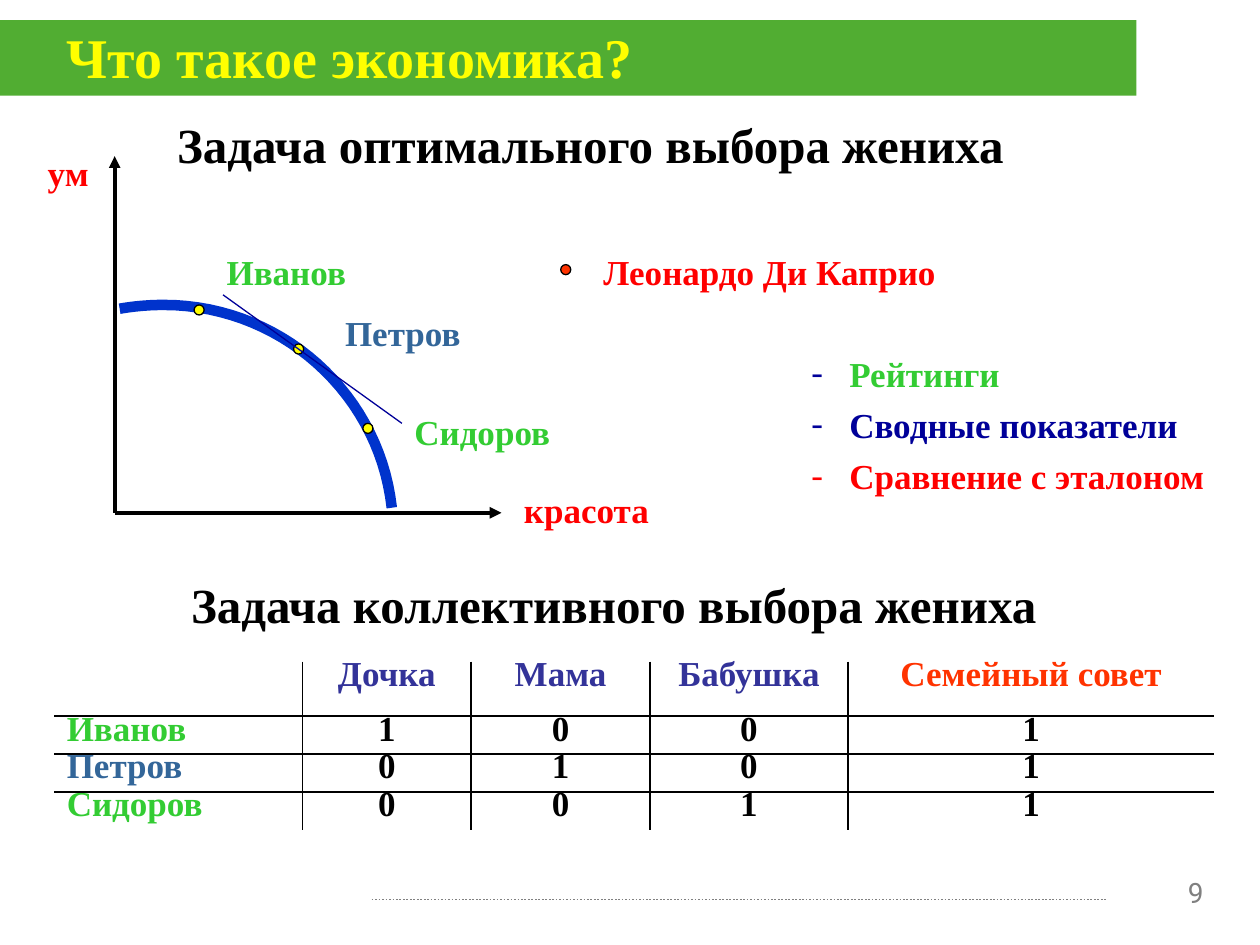
from lxml.etree import SubElement
from pptx import Presentation
from pptx.dml.color import RGBColor
from pptx.enum.dml import MSO_LINE
from pptx.enum.shapes import MSO_CONNECTOR, MSO_SHAPE
from pptx.enum.text import MSO_ANCHOR, MSO_AUTO_SIZE, PP_ALIGN
from pptx.oxml.ns import qn
from pptx.util import Inches, Pt

SERIF = "Times New Roman"
BLACK, RED, GREEN, YELLOW = "000000", "FF0000", "33CC33", "FFFF00"
NAVY, STEEL, INDIGO, ORANGE, GREY = "000099", "336699", "333399", "FF3300", "808080"

TITLE = "Что такое экономика?"
HEADINGS = [
    ("Задача оптимального выбора жениха", 1.12, 0.86, 7.13),
    ("Задача коллективного выбора жениха", 1.38, 4.51, 6.98),
]
LABELS = [
    ("ум", 0.28, 1.15, 0.71, RED),
    ("красота", 4.06, 3.83, 1.5, RED),
    ("Иванов", 1.7, 1.94, 1.5, GREEN),
    ("Петров", 2.64, 2.42, 1.5, STEEL),
    ("Сидоров", 3.19, 3.21, 1.5, GREEN),
    ("Леонардо Ди Каприо", 4.69, 1.94, 3.23, RED),
]
METHODS = [
    ("Рейтинги", GREEN, NAVY),
    ("Сводные показатели", NAVY, NAVY),
    ("Сравнение с эталоном", RED, RED),
]
GROOMS = [(1.54, 2.42), (2.33, 2.73), (2.88, 3.36)]
IDEAL = (4.45, 2.1)
ORIGIN = (0.91, 4.07)
AXIS_ENDS = [(0.91, 1.24), (3.98, 4.07)]
FRONTIER = [
    [(0.95, 2.45), (1.07, 2.43), (1.18, 2.42), (1.3, 2.42)],
    [(1.3, 2.42), (2.23, 2.42), (3.01, 3.12), (3.11, 4.03)],
]
STEPS = 30
VOTES = [
    [("", BLACK), ("Дочка", INDIGO), ("Мама", INDIGO), ("Бабушка", INDIGO), ("Семейный совет", ORANGE)],
    [("Иванов", GREEN), *[(vote, BLACK) for vote in "1001"]],
    [("Петров", STEEL), *[(vote, BLACK) for vote in "0101"]],
    [("Сидоров", GREEN), *[(vote, BLACK) for vote in "0011"]],
]
COLUMN_WIDTHS = [1.97, 1.34, 1.42, 1.57, 2.91]
ROW_HEIGHTS = [0.43, 0.3, 0.3, 0.3]


def rgb(color):
    return RGBColor.from_string(color)


def box(*lengths):
    return [Inches(length) for length in lengths]


def style(paragraph, size, color, bold=True, font=SERIF, align=PP_ALIGN.LEFT):
    paragraph.alignment = align
    paragraph.font.name = font
    paragraph.font.size = Pt(size)
    paragraph.font.bold = bold
    paragraph.font.color.rgb = rgb(color)


def place(placeholder, *lengths):
    placeholder.left, placeholder.top, placeholder.width, placeholder.height = box(*lengths)
    placeholder.text_frame.auto_size = MSO_AUTO_SIZE.NONE


def add_text(slide, text, left, top, width, height, size, color, **options):
    frame = slide.shapes.add_textbox(*box(left, top, width, height)).text_frame
    frame.word_wrap = True
    frame.text = text
    style(frame.paragraphs[0], size, color, **options)


def add_line(slide, start, end, color, width, arrow=False):
    line = slide.shapes.add_connector(MSO_CONNECTOR.STRAIGHT, *box(*start, *end))
    line.line.color.rgb = rgb(color)
    line.line.width = Pt(width)
    if arrow:
        SubElement(line.line._get_or_add_ln(), qn("a:tailEnd"), type="triangle")
    SubElement(line._element.spPr, qn("a:effectLst"))
    return line


def add_dot(slide, left, top, color, preset=MSO_SHAPE.OVAL):
    dot = slide.shapes.add_shape(preset, *box(left, top, 0.08, 0.08))
    dot.shadow.inherit = False
    dot.fill.solid()
    dot.fill.fore_color.rgb = rgb(color)
    dot.line.color.rgb = rgb(BLACK)
    dot.line.width = Pt(0.75)


def bezier(controls, t):
    weights = ((1 - t) ** 3, 3 * t * (1 - t) ** 2, 3 * t ** 2 * (1 - t), t ** 3)
    return [sum(w * point[axis] for w, point in zip(weights, controls)) for axis in (0, 1)]


def add_frontier(slide):
    points = [box(*bezier(part, step / STEPS)) for part in FRONTIER for step in range(STEPS + 1)]
    builder = slide.shapes.build_freeform(*points[0])
    builder.add_line_segments(points[1:], close=False)
    curve = builder.convert_to_shape()
    curve.shadow.inherit = False
    curve.fill.background()
    curve.line.color.rgb = rgb("0033CC")
    curve.line.width = Pt(6)


def add_border(cell, side, visible):
    border = SubElement(cell._tc.get_or_add_tcPr(), qn(f"a:ln{side}"), w=str(Pt(1)))
    if visible:
        fill = SubElement(border, qn("a:solidFill"))
        SubElement(fill, qn("a:srgbClr"), val=BLACK)
    else:
        SubElement(border, qn("a:noFill"))


def add_votes(slide):
    size = box(0.43, 5.25, sum(COLUMN_WIDTHS), sum(ROW_HEIGHTS))
    table = slide.shapes.add_table(len(VOTES), len(COLUMN_WIDTHS), *size).table
    table.first_row = table.horz_banding = False
    for column, width in zip(table.columns, COLUMN_WIDTHS):
        column.width = Inches(width)
    for row, height in zip(table.rows, ROW_HEIGHTS):
        row.height = Inches(height)
    last_row, last_column = len(VOTES) - 1, len(COLUMN_WIDTHS) - 1
    for r, votes in enumerate(VOTES):
        for c, (text, color) in enumerate(votes):
            cell = table.cell(r, c)
            cell.text = text
            paragraph = cell.text_frame.paragraphs[0]
            style(paragraph, 20, color, align=PP_ALIGN.CENTER if c else PP_ALIGN.LEFT)
            paragraph.line_spacing = 0.6
            inner = {"L": c > 0, "R": c < last_column, "T": r > 0, "B": r < last_row}
            for side, visible in inner.items():
                add_border(cell, side, visible)
            cell.fill.background()


def fill_methods(body):
    place(body, 6.34, 2.81, 3.39, 1.26)
    frame = body.text_frame
    frame.text = "\n".join(text for text, _, _ in METHODS)
    for i, (paragraph, (_, color, dash_color)) in enumerate(zip(frame.paragraphs, METHODS)):
        properties = paragraph._p.get_or_add_pPr()
        properties.set("marL", str(Inches(0.3)))
        properties.set("indent", str(-Inches(0.3)))
        paragraph.line_spacing = 0.8
        paragraph.space_before = Pt(10 if i else 0)
        SubElement(SubElement(properties, qn("a:buClr")), qn("a:srgbClr"), val=dash_color)
        SubElement(properties, qn("a:buFont"), typeface=SERIF)
        SubElement(properties, qn("a:buChar"), char="-")
        style(paragraph, 20, color)


def main():
    deck = Presentation()
    deck.slide_width, deck.slide_height = box(10, 7.5)
    slide = deck.slides.add_slide(deck.slide_layouts[1])
    title, body = slide.placeholders

    band = slide.shapes.add_shape(MSO_SHAPE.RECTANGLE, *box(0, 0.16, 9.02, 0.6))
    band.shadow.inherit = False
    band.fill.solid()
    band.fill.fore_color.rgb = rgb("51AD32")
    band.line.fill.background()
    band._element.addnext(title._element)
    place(title, 0.43, 0.21, 7.62, 0.47)
    title.text_frame.text = TITLE
    title.text_frame.vertical_anchor = MSO_ANCHOR.MIDDLE
    style(title.text_frame.paragraphs[0], 32, YELLOW)

    for end in AXIS_ENDS:
        add_line(slide, ORIGIN, end, BLACK, 2.25, arrow=True)
    add_frontier(slide)
    fill_methods(body)
    for groom in GROOMS:
        add_dot(slide, *groom, YELLOW)
    for text, left, top, width, color in LABELS:
        add_text(slide, text, left, top, width, 0.44, 20, color)
    add_line(slide, (1.77, 2.34), (3.19, 3.36), NAVY, 0.75)
    add_dot(slide, *IDEAL, ORANGE, MSO_SHAPE.FLOWCHART_CONNECTOR)

    for text, left, top, width in HEADINGS:
        add_text(slide, text, left, top, width, 0.57, 28, BLACK, align=PP_ALIGN.CENTER)
    add_votes(slide)

    footer = add_line(slide, (2.95, 7.14), (8.78, 7.14), GREY, 1)
    footer.line.dash_style = MSO_LINE.ROUND_DOT
    add_text(slide, "9", 9.33, 6.9, 0.31, 0.28, 16, GREY,
             bold=False, font="Roboto", align=PP_ALIGN.CENTER)
    deck.save("out.pptx")


if __name__ == "__main__":
    main()
